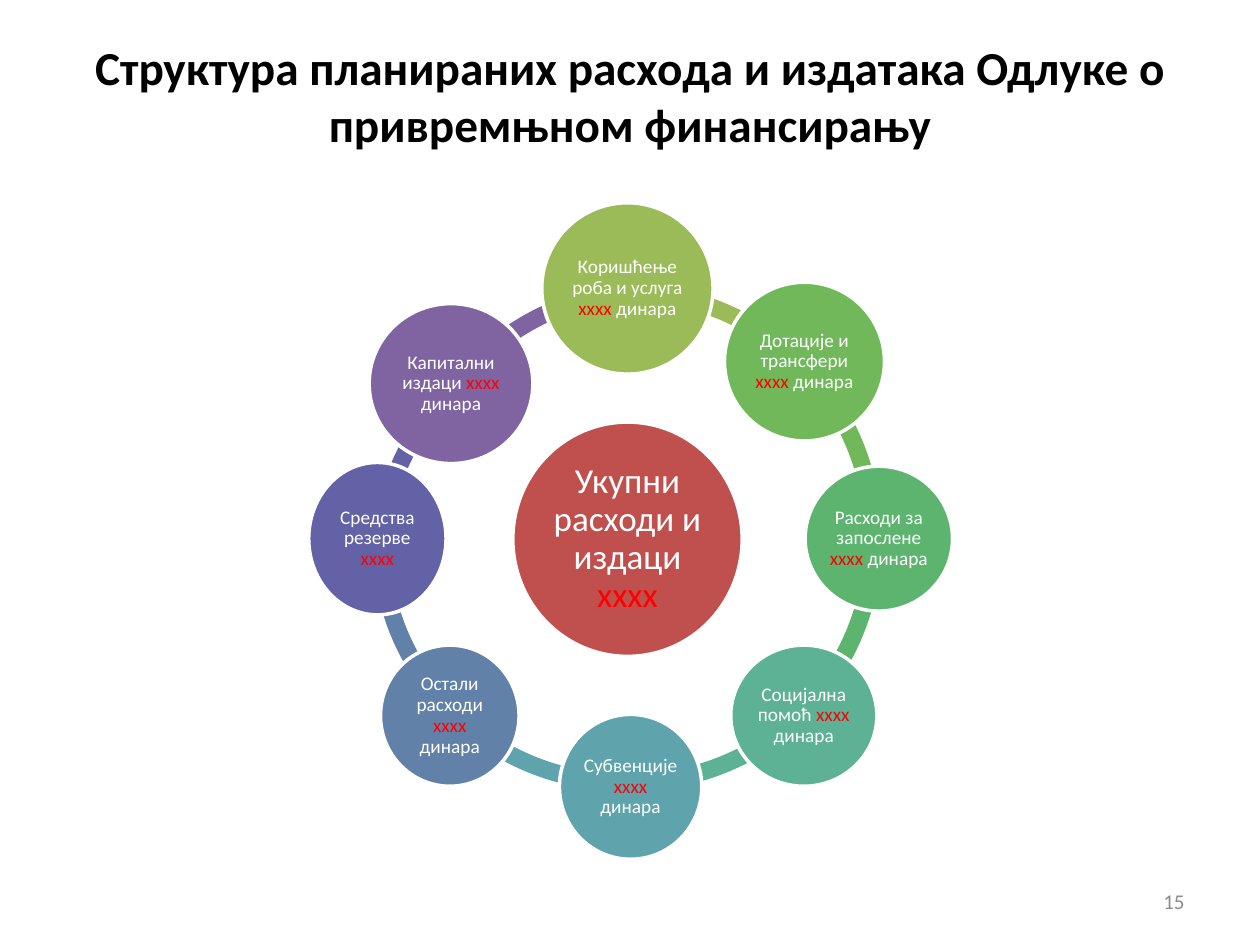
from pptx import Presentation
from pptx import util as u
from pptx.dml.color import RGBColor
from pptx.enum import shapes, text

COLORS = {
    "black": "000000", "white": "FFFFFF", "red": "FF0000", "gray": "8C8C8C",
    "center": "C0504D", "olive": "9BBB59", "green": "70B85A",
    "emerald": "5CB46F", "mint": "5DB195", "teal": "5FA4AD",
    "steel": "6181A9", "indigo": "6362A6", "purple": "8064A2",
}
AMOUNT = "xxxx"
RING_SIZE = 4.05
RING_THICKNESS = 0.034
ADJUSTMENT_PER_DEGREE = 0.6

ARCS = [
    ("purple", 3.13, 2.24, 217.83, 264.88),
    ("indigo", 2.94, 2.45, 185.81, 225.94),
    ("steel", 2.95, 2.25, 135, 180),
    ("teal", 2.93, 2.23, 88.5, 134.1),
    ("mint", 2.98, 2.23, 45.93, 89.8),
    ("emerald", 2.95, 2.25, 0, 45),
    ("green", 2.95, 2.25, 315, 0),
    ("olive", 2.95, 2.25, 270, 315),
]
CIRCLES = [
    ("olive", (4.3, 1.61, 1.36, 1.36), "Коришћење роба и услуга ", " динара"),
    ("green", (5.75, 2.24, 1.27, 1.26), "Дотације и трансфери ", " динара"),
    ("emerald", (6.39, 3.7, 1.17, 1.15), "Расходи за запослене ", " динара"),
    ("mint", (5.8, 5.12, 1.16, 1.12), "Социјална помоћ ", " динара"),
    ("teal", (4.44, 5.67, 1.13, 1.15), "Субвенције ", " динара"),
    ("steel", (3.02, 5.12, 1.1, 1.12), "Остали расходи ", " динара"),
    ("indigo", (2.45, 3.67, 1.09, 1.21), "Средства резерве ", ""),
    ("purple", (2.93, 2.41, 1.3, 1.27), "Капитални издаци ", " динара"),
]


class SlideBuilder:
    font = "Calibri"

    def __init__(self, page):
        self.page = page

    def color(self, name):
        return RGBColor.from_string(COLORS[name])

    def style(self, span, size, color, bold=False):
        span.font.name = self.font
        span.font.size = u.Pt(size)
        span.font.bold = bold
        span.font.color.rgb = self.color(color)

    def title(self, wording, area):
        box = self.page.shapes.title
        box.left, box.top, box.width, box.height = map(u.Inches, area)
        frame = box.text_frame
        frame.text = wording
        frame.vertical_anchor = text.MSO_ANCHOR.MIDDLE
        para = frame.paragraphs[0]
        para.alignment = text.PP_ALIGN.CENTER
        self.style(para.runs[0], 27, "black", bold=True)

    def shape(self, kind, area, color):
        shape = self.page.shapes.add_shape(kind, *map(u.Inches, area))
        shape.shadow.inherit = False
        shape.fill.solid()
        shape.fill.fore_color.rgb = self.color(color)
        return shape

    def arc(self, color, left, top, start, end):
        area = (left, top, RING_SIZE, RING_SIZE)
        arc = self.shape(shapes.MSO_SHAPE.BLOCK_ARC, area, color)
        arc.line.fill.background()
        arc.adjustments[0] = start * ADJUSTMENT_PER_DEGREE
        arc.adjustments[1] = end * ADJUSTMENT_PER_DEGREE
        arc.adjustments[2] = RING_THICKNESS

    def circle(self, color, area, label, unit, size=11, inset=0.02):
        circle = self.shape(shapes.MSO_SHAPE.OVAL, area, color)
        circle.line.color.rgb = self.color("white")
        circle.line.width = u.Pt(2)
        frame = circle.text_frame
        frame.word_wrap = True
        frame.vertical_anchor = text.MSO_ANCHOR.MIDDLE
        frame.margin_left = frame.margin_right = u.Inches(inset)
        frame.margin_top = frame.margin_bottom = u.Inches(inset)
        para = frame.paragraphs[0]
        para.alignment = text.PP_ALIGN.CENTER
        para.line_spacing = 0.9
        for wording, ink in ((label, "white"), (AMOUNT, "red"), (unit, "white")):
            if wording:
                span = para.add_run()
                span.text = wording
                self.style(span, size, ink)

    def page_number(self, number, area):
        box = self.page.shapes.add_textbox(*map(u.Inches, area))
        frame = box.text_frame
        frame.word_wrap = True
        frame.text = number
        frame.vertical_anchor = text.MSO_ANCHOR.MIDDLE
        para = frame.paragraphs[0]
        para.alignment = text.PP_ALIGN.RIGHT
        self.style(para.runs[0], 12, "gray")


def main():
    deck = Presentation()
    deck.slide_width, deck.slide_height = u.Inches(10), u.Inches(7.5)
    builder = SlideBuilder(deck.slides.add_slide(deck.slide_layouts[5]))
    builder.title(
        "Структура планираних расхода и издатака Одлуке о привремњном финансирању",
        (0.5, 0.29, 9, 0.93),
    )
    for arc in ARCS:
        builder.arc(*arc)
    builder.circle("center", (4.07, 3.35, 1.82, 1.86),
                   "Укупни расходи и издаци ", "", size=20, inset=0.03)
    for circle in CIRCLES:
        builder.circle(*circle)
    builder.page_number("15", (7.17, 6.95, 2.33, 0.4))
    deck.save("out.pptx")


if __name__ == "__main__":
    main()
